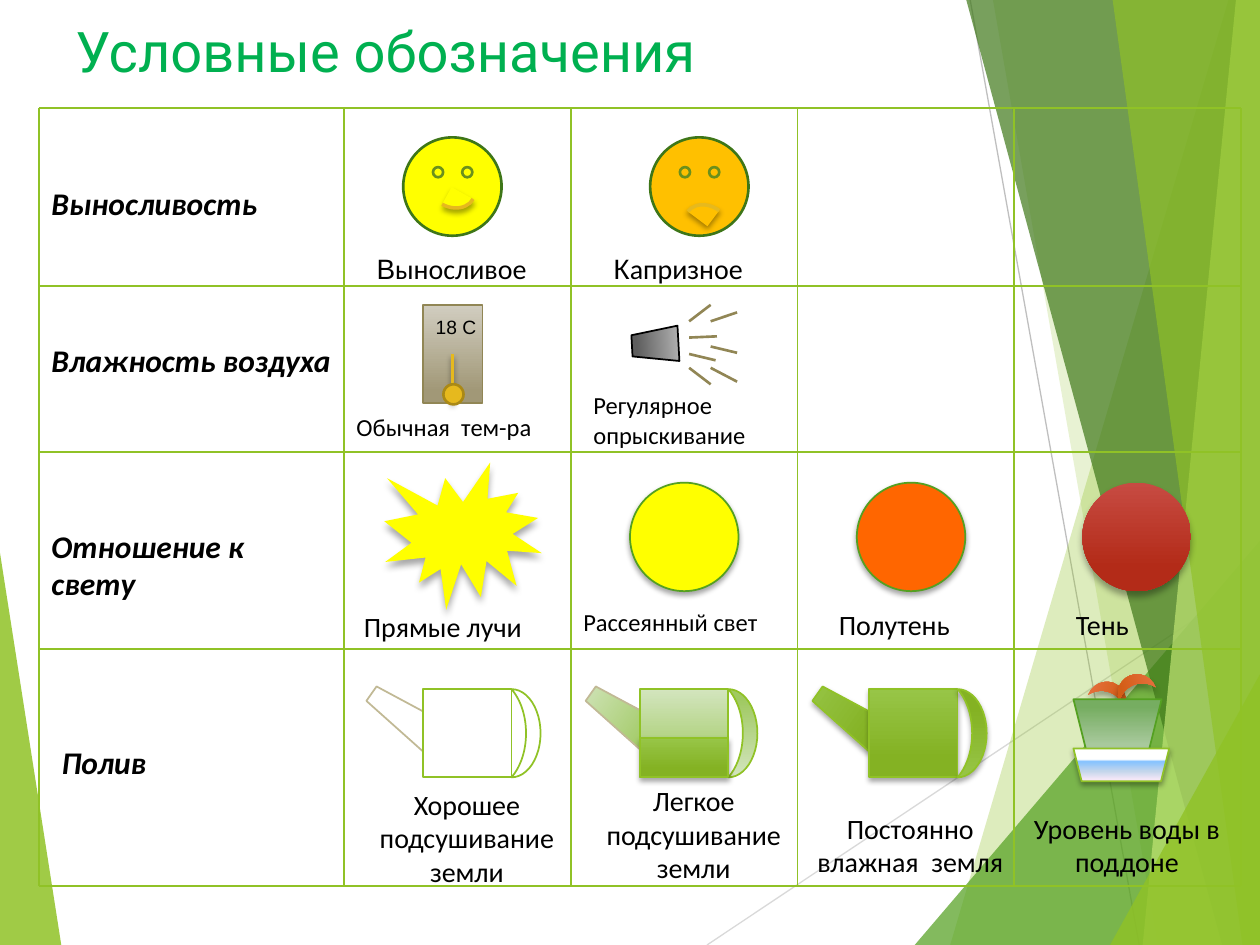
from pptx import Presentation
from pptx.dml.color import RGBColor
from pptx.enum.shapes import MSO_CONNECTOR as Link, MSO_SHAPE as Geo
from pptx.enum.text import MSO_ANCHOR as Anchor, PP_ALIGN as Align
from pptx.oxml.ns import qn
from pptx.util import Pt
from lxml.etree import SubElement as Sub

LIME, LEAF, SUN, GOLD, SAND = "90C226", "54A021", "FFFF00", "E6B91E", "918655"
GREEN = [(0, "97C547"), (78, "84B223")]
PALE = [(0, "D3E5BE"), (88, "A0C962")]
RUST = [(0, "E87242"), (78, "D35D16")]
WATER = [(33, "FFFFFF"), (40, "85C2FF"), (70, "C4D6EB"), (100, "FFEBFA")]
COLS = [22.3, 196.6, 326.2, 455.8, 579.6, 709]
ROWS = [61.9, 163.4, 258.5, 371, 506.2]


def hue(code):
    return RGBColor.from_string(code)


def shade(item, blur, gap):
    props = item._element.spPr
    glow = props.find(qn("a:effectLst"))
    if glow is None:
        glow = Sub(props, qn("a:effectLst"))
    if blur:
        cast = Sub(glow, qn("a:outerShdw"), blurRad=str(Pt(blur)),
                   dist=str(Pt(gap)), dir="5400000", rotWithShape="0")
        tone = Sub(cast, qn("a:srgbClr"), val="000000")
        Sub(tone, qn("a:alpha"), val="35000")


def paint(item, fill, turn=270):
    if isinstance(fill, str):
        item.fill.solid()
        item.fill.fore_color.rgb = hue(fill)
        return
    item.fill.gradient()
    item.fill.gradient_angle = turn
    stops = item._element.spPr.find(qn("a:gradFill")).find(qn("a:gsLst"))
    for stop in list(stops):
        stops.remove(stop)
    for spot, code in fill:
        stop = Sub(stops, qn("a:gs"), pos=str(spot * 1000))
        Sub(stop, qn("a:srgbClr"), val=code)


def edge(item, code, width):
    if code:
        item.line.color.rgb = hue(code)
        item.line.width = Pt(width)
    else:
        item.line.fill.background()


def form(kin, kind, box, fill, code=None, width=1, rot=0, cast=(0, 0), turn=270):
    item = kin.add_shape(kind, *map(Pt, box))
    item.rotation = rot
    paint(item, fill, turn)
    edge(item, code, width)
    item.shadow.inherit = False
    shade(item, *cast)
    return item


def rule(kin, ends, code, width, cast=(0, 0)):
    item = kin.add_connector(Link.STRAIGHT, *map(Pt, ends))
    edge(item, code, width)
    shade(item, *cast)


def text(kin, box, words, size, font="Calibri", code="000000", bold=None,
         align=None, lead=""):
    item = kin.add_textbox(*map(Pt, box))
    frame = item.text_frame
    frame.word_wrap = True
    frame.text = words
    for para in frame.paragraphs:
        para.alignment = align
        para.font.size = Pt(size)
        para.font.color.rgb = hue(code)
        para.font.bold = para.font.italic = bold
        if not lead:
            para.font.name = font
    if lead:
        para = frame.paragraphs[0]
        para.runs[0].text = lead
        para.runs[0].font.name = "Arial"
        rest = para.add_run()
        rest.text = words
        rest.font.name = font
    return frame


def group(kin):
    return kin.add_group_shape().shapes


def head(kin, x, y, words, w=174.3, h=28.8):
    text(kin, (x, y, w, h), words, 18, bold=True)


def backdrop(kin, w, h):
    kin = group(kin)

    def facet(spots, code, alpha):
        pen = kin.build_freeform(Pt(spots[0][0]), Pt(spots[0][1]), scale=1.0)
        pen.add_line_segments([(Pt(x), Pt(y)) for x, y in spots[1:]])
        item = pen.convert_to_shape()
        paint(item, code)
        edge(item, None, 0)
        item.shadow.inherit = False
        tone = item._element.spPr.find(qn("a:solidFill"))[0]
        Sub(tone, qn("a:alpha"), val=str(alpha * 1000))

    def band(top, foot, code, alpha):
        facet([(top, 0), (foot, h), (w, h), (w, 0)], code, alpha)

    def wedge(foot, y, code, alpha):
        facet([(foot, h), (w, y), (w, h)], code, alpha)

    facet([(0, 316), (35, h), (0, h)], LIME, 85)
    rule(kin, (404, h, w, 329), "D9D9D9", 0.75)
    rule(kin, (554.4, 0, 651, h), "BFBFBF", 0.75)
    band(702, 543, LIME, 30)
    band(567.4, 661.7, LIME, 20)
    wedge(522.7, 309, LEAF, 72)
    band(552.2, 698.4, "3F7819", 70)
    band(706.3, 653, "C0E474", 70)
    band(635.8, 710, LIME, 65)
    wedge(634.3, 385.2, LIME, 80)


def title(kin, x, y, w, h):
    frame = text(kin, (x, y, w, h), "Условные обозначения", 32, "Roboto", "00B050")
    frame.vertical_anchor = Anchor.MIDDLE


def grid(kin, cols, rows):
    for y in rows:
        rule(kin, (cols[0], y, cols[-1], y), LIME, 1)
    for x in cols:
        rule(kin, (x, rows[0], x, rows[-1]), LIME, 1)


def face(kin, x, y, fill, dx, dy, rot):
    kin = group(kin)
    form(kin, Geo.OVAL, (x, y, 56.2, 56.2), fill, "3E7618", 1.5)
    for eye in (17, 33.7):
        form(kin, Geo.OVAL, (x + eye, y + 17, 5.8, 5.8), fill, "6B901C", 1.5)
    form(kin, Geo.ARC, (x + dx, y + dy, 22.3, 28.1), fill, GOLD, 2, rot, (3, 2))


def gauge(kin, x, y):
    kin = group(kin)
    form(kin, Geo.RECTANGLE, (x, y, 33.8, 56.2), [(0, "D1CDC0"), (88, "A19877")], SAND)
    rule(kin, (x + 16.6, y + 28.1, x + 16.6, y + 56.2), GOLD, 2, (3, 2))
    form(kin, Geo.OVAL, (x + 11.5, y + 45.4, 11.5, 11.5), GOLD, "AA8916", 1.5)
    text(kin, (x, y + 2.2, 50.4, 20.9), "18 С", 11, "Arial")


def spray(kin, x, y):
    kin = group(kin)
    form(kin, Geo.FLOWCHART_MANUAL_OPERATION, (x, y + 9.4, 20.2, 26.6),
         [(0, "B2B2B2"), (88, "5E5E5E")], "000000", rot=86.9)
    for a, b, c, d in [(29.5, 9.4, 41.8, 0), (29.5, 18.7, 45.4, 18),
                       (29.5, 28.1, 44.6, 31.7), (41.8, 23.8, 56.9, 27.4),
                       (41.8, 9.4, 56.9, 4.3), (29.5, 36, 41.8, 45.4),
                       (41.8, 36, 56.9, 43.9)]:
        rule(kin, (x + a, y + b, x + c, y + d), SAND, 1.5)


def can(kin, x, y, fill, rim, cast=(0, 0), nose=22.3, half=False):
    kin = group(kin)
    form(kin, Geo.TRAPEZOID, (x - nose, y - 6.5, 20.2, 42.5), fill, rim, rot=305, cast=cast)
    form(kin, Geo.RECTANGLE, (x, y, 50.4, 50.4), fill, LIME, cast=cast)
    form(kin, Geo.MOON, (x + 50.4, y, 16.6, 50.4), fill, LIME, rot=180, cast=cast)
    if half:
        form(kin, Geo.RECTANGLE, (x, y + 28.1, 50.4, 22.3), GREEN, LIME, cast=(3, 2))


def pot(kin, x, y):
    kin = group(kin)
    left = form(kin, Geo.MOON, (x + 15.1, y + 4.3, 11.5, 22.3), RUST, rot=290.9, cast=(4, 3))
    left._element.spPr.find(qn("a:xfrm")).set("flipH", "1")
    form(kin, Geo.MOON, (x + 28.8, y, 11.5, 22.3), RUST, rot=69.1, cast=(4, 3))
    form(kin, Geo.TRAPEZOID, (x, y + 19.4, 50.4, 36),
         [(0, "C0D6B9"), (88, "76AD61")], LEAF, rot=180)
    form(kin, Geo.TRAPEZOID, (x, y + 47.5, 54.7, 18.7), WATER, LIME,
         rot=180, cast=(3, 2), turn=90)


def vigour(kin, cols, y):
    head(kin, cols[0], y + 39.6, "Выносливость")
    face(kin, cols[1] + 33.8, y + 16.6, SUN, 16.5, 14.4, 118.9)
    face(kin, cols[2] + 45.3, y + 16.6, "FFC000", 21.6, 36.7, 306.8)
    for x, lead, words in [(cols[1] + 11.5, "В", "ыносливое"),
                           (cols[2] + 17.3, "К", "апризное")]:
        text(kin, (x, y + 78.5, 112.3, 26.6), words, 16, lead=lead)


def air(kin, cols, y):
    head(kin, cols[0], y + 28.1, "Влажность воздуха")
    gauge(kin, cols[1] + 45.3, y + 10.8)
    spray(kin, cols[2] + 38.1, y + 10.8)
    text(kin, (cols[1], y + 68.4, 135.4, 23.8), "Обычная  тем-ра", 14)
    text(kin, (cols[2] + 5.8, y + 56.2, 135.4, 41), "Регулярное опрыскивание", 14)


def light(kin, cols, y):
    head(kin, cols[0], y + 38.9, "Отношение к\nсвету", 230.4, 50.4)
    for x, dy, w, words, size in [(cols[1] + 4.3, 86.4, 119.5, "Прямые лучи", 16),
                                  (cols[2], 85, 157.7, "Рассеянный свет", 14),
                                  (cols[3] + 16.5, 85, 106.6, "Полутень", 16),
                                  (cols[4] + 28.1, 85, 106.6, "Тень", 16)]:
        text(kin, (x, y + dy, w, 26.6), words, size)
    form(kin, Geo.EXPLOSION1, (cols[1] + 23, y + 5.8, 90, 84.2), SUN, cast=(4, 3))
    for x, fill, code, cast in [(cols[2] + 33.8, SUN, LEAF, (3, 2)),
                                (cols[3] + 33.8, "FF6600", LEAF, (3, 2)),
                                (cols[4] + 38.9, [(0, "C74B42"), (78, "B32B18")], None, (4, 3))]:
        form(kin, Geo.OVAL, (x, y + 17.3, 62, 62), fill, code, cast=cast)


def water(kin, cols, y):
    head(kin, cols[0] + 5.8, y + 50.2, "Полив", 84.2)
    for x, dy, h, words in [(cols[1], 75.4, 65.5, "Хорошее подсушивание земли"),
                            (cols[2], 73.2, 65.5, "Легкое подсушивание земли"),
                            (cols[3] - 5.8, 89, 46.1, "Постоянно влажная  земля"),
                            (cols[4] - 5.8, 89, 46.1, "Уровень воды в поддоне")]:
        text(kin, (x, y + dy, 140.4, h), words, 16, align=Align.CENTER)
    can(kin, cols[1] + 45.3, y + 22.8, "FFFFFF", "C1B995")
    can(kin, cols[3] + 41, y + 22.8, GREEN, LIME, (3, 2))
    can(kin, cols[2] + 39.6, y + 22.8, PALE, "C1B995", nose=20.9, half=True)
    pot(kin, cols[4] + 33.8, y + 9.2)


def main():
    deck = Presentation()
    deck.slide_width, deck.slide_height = Pt(720), Pt(540)
    kin = deck.slides.add_slide(deck.slide_layouts[6]).shapes
    backdrop(kin, 720, 540)
    title(kin, 36, 5.8, 648, 46.1)
    grid(kin, COLS, ROWS)
    for row, y in zip((vigour, air, light, water), ROWS):
        row(kin, COLS, y)
    deck.save("out.pptx")


if __name__ == "__main__":
    main()
